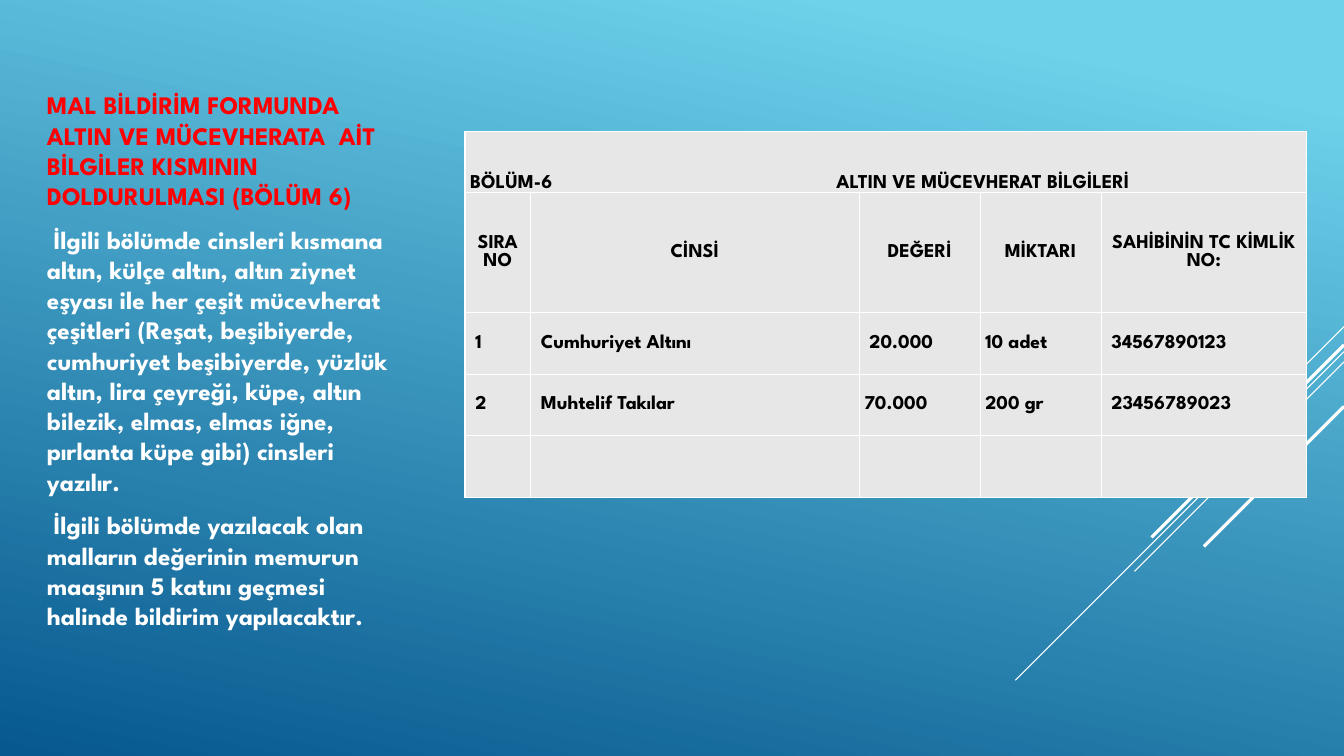
from lxml.etree import SubElement
from pptx import Presentation
from pptx.dml.color import RGBColor
from pptx.enum.shapes import MSO_CONNECTOR
from pptx.enum.text import MSO_ANCHOR as Anchor, MSO_AUTO_SIZE as AutoSize, PP_ALIGN as Align
from pptx.oxml.ns import qn
from pptx.util import Cm, Pt

WHITE, RED, BLACK, GREY = "FFFFFF", "FF0000", "000000", "E7E7E7"
SKY, NAVY = "6ED2EB", "06588E"
WIDTH, HEIGHT = 33.87, 19.05

GUIDANCE = [
    ("MAL BİLDİRİM FORMUNDA ALTIN VE MÜCEVHERATA  AİT BİLGİLER KISMININ DOLDURULMASI (BÖLÜM 6)", RED),
    (" İlgili bölümde cinsleri kısmana altın, külçe altın, altın ziynet eşyası ile her çeşit "
     "mücevherat çeşitleri (Reşat, beşibiyerde, cumhuriyet beşibiyerde, yüzlük altın, lira çeyreği, "
     "küpe, altın bilezik, elmas, elmas iğne, pırlanta küpe gibi) cinsleri yazılır.", WHITE),
    (" İlgili bölümde yazılacak olan malların değerinin memurun maaşının 5 katını geçmesi halinde "
     "bildirim yapılacaktır.", WHITE),
]
JEWELLERY = [
    ["BÖLÜM-6\tALTIN VE MÜCEVHERAT BİLGİLERİ", "", "", "", ""],
    ["SIRA\vNO", "CİNSİ", "DEĞERİ", "MİKTARI", "SAHİBİNİN TC KİMLİK NO:"],
    [" 1", " Cumhuriyet Altını", " 20.000", "10 adet", " 34567890123"],
    [" 2", " Muhtelif Takılar", "70.000", "200 gr", " 23456789023"],
    ["", "", "", "", ""],
]
COLUMN_WIDTHS = [1.65, 8.28, 3.05, 3.05, 5.18]
ROW_HEIGHTS = [1.55, 3.02, 1.55, 1.55, 1.55]
STREAKS = [(8.23, 2.54, 0.75), (8.86, 8.28, 0.75), (9.12, 5.28, 0.75),
           (8.69, 4.85, 2.25), (10.24, 3.53, 2.25)]


def rgb(value):
    return RGBColor.from_string(value)


def write(paragraph, text, font="League Spartan", size=14, color=BLACK, align=Align.LEFT,
          spacing=None, before=0, after=0):
    paragraph.text = text
    paragraph.alignment = align
    paragraph.line_spacing = spacing
    paragraph.space_before, paragraph.space_after = Pt(before), Pt(after)
    for run in paragraph.runs:
        run.font.name, run.font.size, run.font.bold = font, Pt(size), True
        run.font.color.rgb = rgb(color)


class DeclarationSlide:
    """Draws the parts of one declaration guide slide in a shared style."""

    def __init__(self, deck, font="League Spartan"):
        self.font = font
        self.slide = deck.slides.add_slide(deck.slide_layouts[1])
        title = self.slide.shapes.title
        title.element.getparent().remove(title.element)

    def background(self, start, end, angle):
        fill = self.slide.background.fill
        fill.gradient()
        fill.gradient_angle = 360 - angle
        for stop, color, position in zip(fill.gradient_stops, (start, end), (0.1, 1)):
            stop.color.rgb = rgb(color)
            stop.position = position

    def streak(self, top, reach, weight):
        line = self.slide.shapes.add_connector(
            MSO_CONNECTOR.STRAIGHT, Cm(WIDTH), Cm(top), Cm(WIDTH - reach), Cm(top + reach))
        line.line.color.rgb = rgb(WHITE)
        line.line.width = Pt(weight)
        SubElement(line.element.spPr, qn("a:effectLst"))

    def body(self, passages, left, top, width, height):
        guidance = self.slide.placeholders[1]
        guidance.left, guidance.top = Cm(left), Cm(top)
        guidance.width, guidance.height = Cm(width), Cm(height)
        frame = guidance.text_frame
        frame.auto_size, frame.word_wrap = AutoSize.NONE, True
        frame.vertical_anchor = Anchor.TOP
        for index, (text, color) in enumerate(passages):
            paragraph = frame.add_paragraph() if index else frame.paragraphs[0]
            write(paragraph, text, self.font, 18, color, spacing=1.0, before=3.6, after=6)
            properties = paragraph._p.get_or_add_pPr()
            properties.set("marL", "0")
            properties.set("indent", "0")
            SubElement(properties, qn("a:buNone"))

    def table(self, rows, left, top, heading_tab):
        grid = self.slide.shapes.add_table(
            len(rows), len(COLUMN_WIDTHS), Cm(left), Cm(top),
            Cm(sum(COLUMN_WIDTHS)), Cm(sum(ROW_HEIGHTS))).table
        for column, width in zip(grid.columns, COLUMN_WIDTHS):
            column.width = Cm(width)
        for row, height in zip(grid.rows, ROW_HEIGHTS):
            row.height = Cm(height)
        for r, texts in enumerate(rows):
            for c, text in enumerate(texts):
                self.cell(grid.cell(r, c), text, Align.CENTER if r == 1 else Align.LEFT)
        heading = grid.cell(0, 0)
        heading.merge(grid.cell(0, len(COLUMN_WIDTHS) - 1))
        heading.vertical_anchor = Anchor.BOTTOM
        tabs = SubElement(heading.text_frame.paragraphs[0]._p.get_or_add_pPr(), qn("a:tabLst"))
        SubElement(tabs, qn("a:tab"), pos=str(Cm(heading_tab)), algn="l")

    def cell(self, cell, text, align):
        cell.margin_left = cell.margin_right = Cm(0.13)
        cell.margin_top = cell.margin_bottom = 0
        cell.vertical_anchor = Anchor.MIDDLE
        write(cell.text_frame.paragraphs[0], text, self.font, align=align)
        properties = cell._tc.get_or_add_tcPr()
        for side in ("a:lnL", "a:lnR", "a:lnT", "a:lnB"):
            border = SubElement(properties, qn(side), w=str(Pt(1)))
            SubElement(SubElement(border, qn("a:solidFill")), qn("a:srgbClr"), val=WHITE)
        cell.fill.solid()
        cell.fill.fore_color.rgb = rgb(GREY)


def main():
    deck = Presentation()
    deck.slide_width, deck.slide_height = Cm(WIDTH), Cm(HEIGHT)
    page = DeclarationSlide(deck)
    page.background(SKY, NAVY, 102)
    for streak in STREAKS:
        page.streak(*streak)
    page.body(GUIDANCE, 0.93, 2.13, 9.6, 15.01)
    page.table(JEWELLERY, 11.72, 3.31, 9.23)
    deck.save("out.pptx")


if __name__ == "__main__":
    main()
